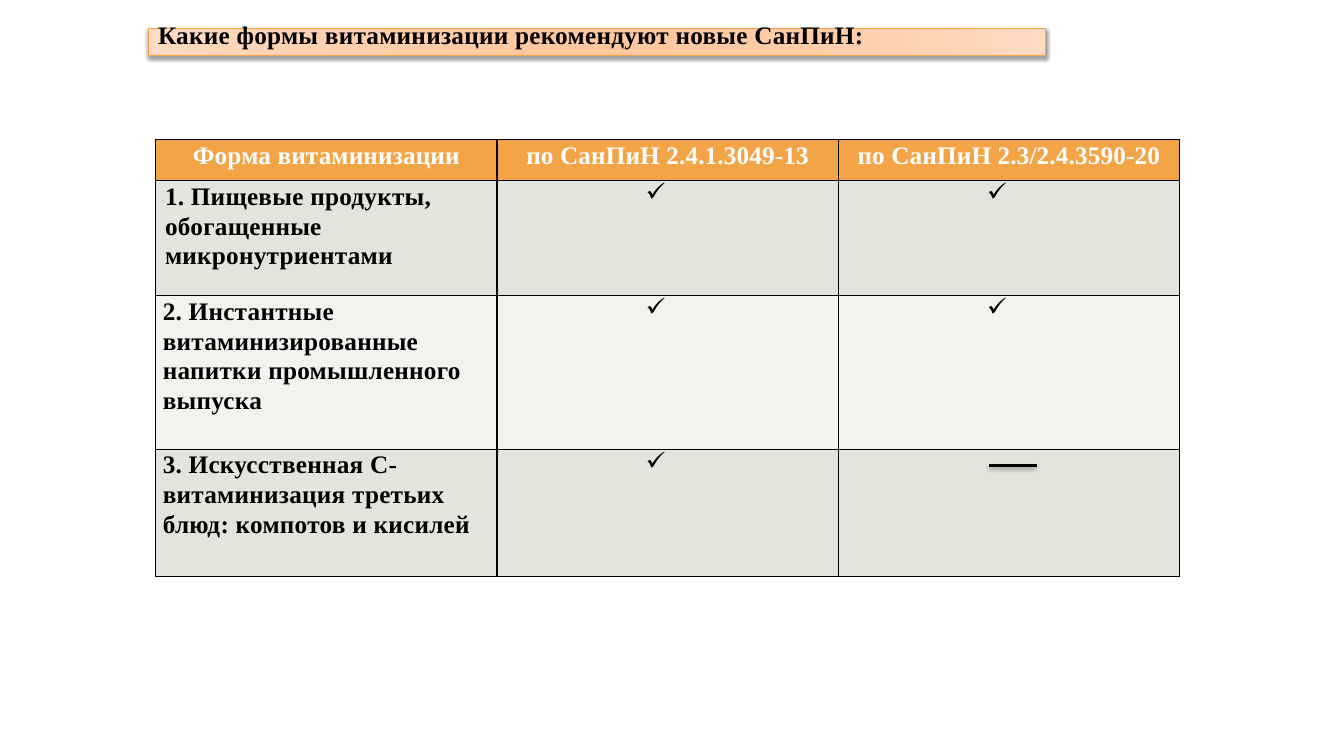
from pptx import Presentation
from pptx.dml.color import RGBColor
from pptx.enum import shapes, text
from pptx.oxml import parse_xml
from pptx.util import Pt

COLORS = {"accent": "F3A447", "black": "000000", "white": "FFFFFF",
          "band": "E1E5DC", "light": "F0F3EE"}
NS = 'xmlns:a="http://schemas.openxmlformats.org/drawingml/2006/main"'
EMU = 12700


def write(paragraph, wording, color, spacing):
    """Add one bold 18 pt run with letter spacing in hundredths of a point."""
    run = paragraph.add_run()
    run.text = wording
    for key, value in {"name": "Times New Roman", "size": Pt(18), "bold": True}.items():
        setattr(run.font, key, value)
    run.font.color.rgb = RGBColor.from_string(COLORS[color])
    run.font._element.set("spc", str(spacing))


def cast_shadow(shape, distance, opacity):
    """Append a soft downward shadow; the outline must already be set."""
    shape._element.spPr.append(parse_xml(
        f'<a:effectLst {NS}><a:outerShdw blurRad="{int(3.1 * EMU)}" '
        f'dist="{int(distance * EMU)}" dir="5400000" rotWithShape="0">'
        f'<a:srgbClr val="{COLORS["black"]}"><a:alpha val="{opacity}000"/>'
        '</a:srgbClr></a:outerShdw></a:effectLst>'))


deck = Presentation()
deck.slide_width, deck.slide_height = Pt(960), Pt(540)
slide = deck.slides.add_slide(deck.slide_layouts[6])

# Table of vitamin enrichment forms: wording and the two columns that are ticked
HEADERS = ["Форма витаминизации", "по СанПиН 2.4.1.3049-13", "по СанПиН 2.3/2.4.3590-20"]
FORMS = [
    ("1. Пищевые продукты, обогащенные микронутриентами", True, True),
    ("2. Инстантные витаминизированные напитки промышленного выпуска", True, True),
    ("3. Искусственная С- витаминизация третьих блюд: компотов и кисилей", True, False),
]
ROW_HEIGHTS = [29.3, 82.2, 109.6, 90.7]
ROW_FILLS = ["accent", "band", "light", "band"]
CELL_MARGINS = {"margin_left": Pt(5), "margin_right": Pt(5),
                "margin_top": 0, "margin_bottom": 0}

table = slide.shapes.add_table(4, 3, Pt(111.3), Pt(99.8), Pt(731.4), Pt(311.8)).table
for column in table.columns:
    column.width = Pt(243.8)
for r, contents in enumerate([HEADERS, *FORMS]):
    table.rows[r].height = Pt(ROW_HEIGHTS[r])
    for c, content in enumerate(contents):
        cell = table.cell(r, c)
        for key, value in CELL_MARGINS.items():
            setattr(cell, key, value)
        for side in "LRTB":
            cell._tc.get_or_add_tcPr().append(parse_xml(
                f'<a:ln{side} {NS} w="{EMU}"><a:solidFill>'
                f'<a:srgbClr val="{COLORS["black"]}"/></a:solidFill></a:ln{side}>'))
        cell.fill.solid()
        cell.fill.fore_color.rgb = RGBColor.from_string(COLORS[ROW_FILLS[r]])
        paragraph = cell.text_frame.paragraphs[0]
        paragraph.line_spacing = 1.07
        if r == 0 or c > 0:
            paragraph.alignment = text.PP_ALIGN.CENTER
        properties = paragraph._p.get_or_add_pPr()
        if content is True:
            properties.set("marL", str(27 * EMU))
            properties.set("indent", str(-27 * EMU))
            properties.append(parse_xml(f'<a:buFont {NS} typeface="Wingdings" charset="2"/>'))
            properties.append(parse_xml(f'<a:buChar {NS} char="ü"/>'))
            write(paragraph, " ", "black", 20)
        elif content:
            if (r, c) == (1, 0):
                properties.set("marL", str(int(1.6 * EMU)))
            write(paragraph, content, "black" if r else "white", 20 if r else 10)

# Dash for the form that is no longer recommended
dash = slide.shapes.add_connector(shapes.MSO_CONNECTOR.STRAIGHT,
                                  Pt(706.8), Pt(332.6), Pt(740.8), Pt(332.6))
dash.line.width = Pt(2)
dash.line.color.rgb = RGBColor.from_string(COLORS["black"])
cast_shadow(dash, 1.8, 35)

# Heading bar
heading = slide.shapes.add_shape(shapes.MSO_SHAPE.RECTANGLE,
                                 Pt(105.8), Pt(20.2), Pt(641), Pt(19.4))
STOPS = [(0, "FFDBC3"), (30, "FFCDA8"), (45, "FFC89F"),
         (55, "FFC89F"), (73, "FFCDA8"), (100, "FFDBC3")]
heading.fill.gradient()
gradient = heading._element.spPr.find(
    "{http://schemas.openxmlformats.org/drawingml/2006/main}gradFill")
stops_xml = "".join(f'<a:gs pos="{position}000"><a:srgbClr val="{color}"/></a:gs>'
                    for position, color in STOPS)
gradient.getparent().replace(gradient, parse_xml(
    f'<a:gradFill {NS} rotWithShape="1"><a:gsLst>{stops_xml}</a:gsLst>'
    '<a:lin ang="960000" scaled="0"/></a:gradFill>'))
heading.line.width = Pt(0.75)
heading.line.color.rgb = RGBColor.from_string(COLORS["accent"])
cast_shadow(heading, 1.6, 38)

frame = heading.text_frame
for key, value in {"word_wrap": True, "vertical_anchor": text.MSO_ANCHOR.TOP,
                   "auto_size": text.MSO_AUTO_SIZE.SHAPE_TO_FIT_TEXT}.items():
    setattr(frame, key, value)
title = frame.paragraphs[0]
title.alignment = text.PP_ALIGN.LEFT
title.line_spacing = Pt(11.5)
write(title, "Какие формы витаминизации рекомендуют новые СанПиН:", "black", 20)

deck.save("out.pptx")
